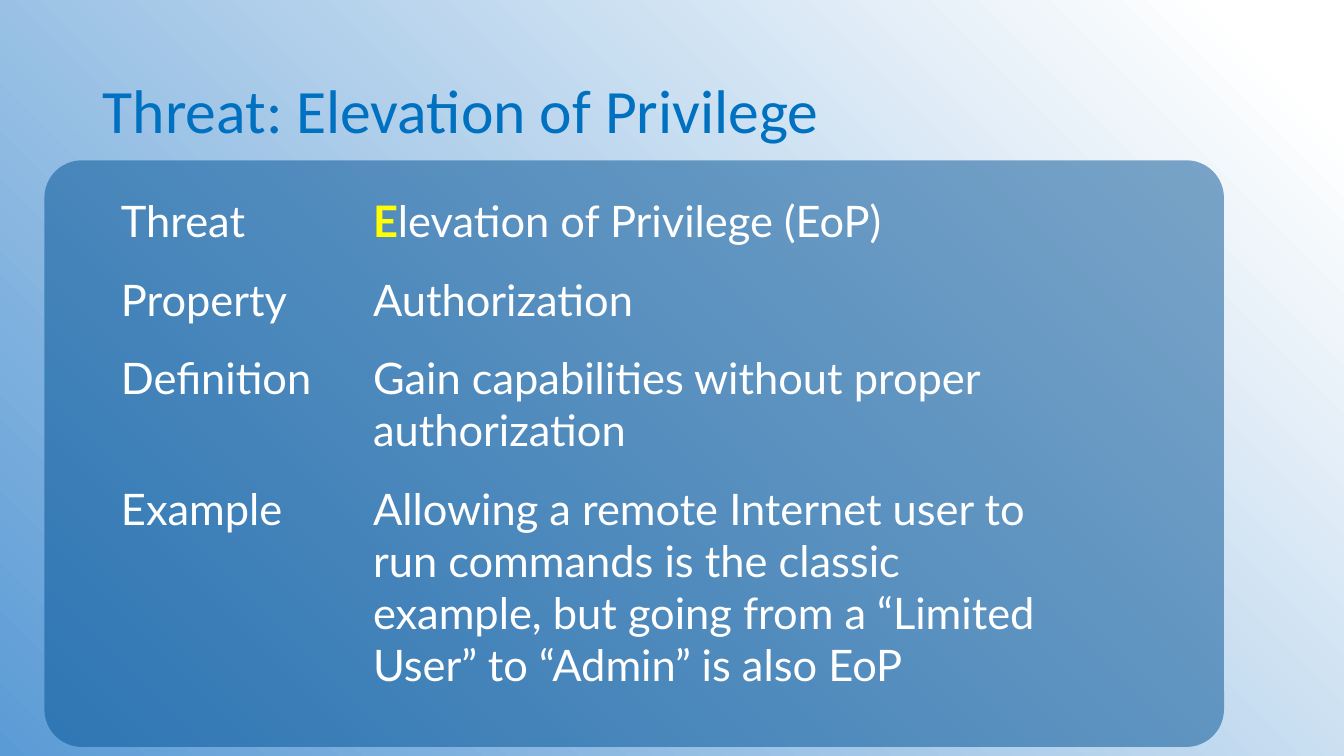
from pptx import Presentation
from pptx.dml.color import RGBColor
from pptx.enum.shapes import MSO_SHAPE as Shape
from pptx.enum.text import MSO_ANCHOR as Anchor, MSO_AUTO_SIZE as AutoSize, PP_ALIGN as Align
from pptx.oxml import parse_xml
from pptx.oxml.ns import nsdecls, qn
from pptx.util import Inches, Pt

WHITE = RGBColor(0xFF, 0xFF, 0xFF)
SKY = RGBColor(0x5B, 0x9B, 0xD5)
NAVY = RGBColor(0x00, 0x51, 0x94)
TITLE_BLUE = RGBColor(0x00, 0x70, 0xC0)
YELLOW = RGBColor(0xFF, 0xFF, 0x00)

PLAIN_TABLE_STYLE = "{2D5ABB26-0587-4C30-8999-92F81FD0307C}"
COLUMNS = (2.5, 7.24)
LINE = 0.52  # height of one text line
PADDING = 0.13

# label, highlighted initial, remaining text, number of lines
ROWS = (
    ("Threat", "E", "levation of Privilege (EoP)", 1),
    ("Property", "", "Authorization", 1),
    ("Definition", "", "Gain capabilities without proper authorization", 2),
    ("Example", "", "Allowing a remote Internet user to run commands is the classic "
     "example, but going from a “Limited User” to “Admin” is also EoP", 4),
)


def add_span(para, text, font, size, color, bold=False):
    span = para.add_run()
    span.text = text
    span.font.name = font
    span.font.size = Pt(size)
    span.font.color.rgb = color
    span.font.bold = bold


def paint_background(page):
    fill = page.background.fill
    fill.gradient()
    fill.gradient_angle = 225
    for stop, position, color in zip(fill.gradient_stops, (0.06, 1), (WHITE, SKY)):
        stop.position = position
        stop.color.rgb = color


def add_panel(page):
    """Add the half-transparent rounded panel behind the table."""
    panel = page.shapes.add_shape(Shape.ROUNDED_RECTANGLE, Inches(0.44), Inches(1.59),
                                  Inches(11.7), Inches(5.82))
    panel.adjustments[0] = 0.064
    panel.shadow.inherit = False
    panel.line.fill.background()
    panel.fill.solid()
    panel.fill.fore_color.rgb = NAVY
    color = panel.fill._xPr.find(qn("a:solidFill"))[0]
    color.append(parse_xml(f'<a:alpha {nsdecls("a")} val="50000"/>'))


def set_title(page, text):
    title = page.shapes.title
    title.left, title.top = Inches(0.92), Inches(0.4)
    title.width, title.height = Inches(11.5), Inches(1.45)
    frame = title.text_frame
    frame.auto_size = AutoSize.NONE
    frame.word_wrap = True
    frame.vertical_anchor = Anchor.MIDDLE
    para = frame.paragraphs[0]
    para.alignment = Align.LEFT
    para.line_spacing = 0.9
    add_span(para, text, "Calibri", 44, TITLE_BLUE)


def fill_cell(cell, initial, text):
    cell.fill.background()
    cell.margin_left = cell.margin_right = Inches(PADDING)
    cell.margin_top = cell.margin_bottom = Inches(PADDING)
    para = cell.text_frame.paragraphs[0]
    if initial:
        add_span(para, initial, "Lato", 31, YELLOW, bold=True)
    add_span(para, text, "Lato", 31, WHITE)


def add_threat_table(page):
    heights = [lines * LINE + 2 * PADDING for *_, lines in ROWS]
    frame = page.shapes.add_table(len(ROWS), len(COLUMNS), Inches(1.07), Inches(1.8),
                                  Inches(sum(COLUMNS)), Inches(sum(heights)))
    table = frame.table
    table.first_row = table.horz_banding = False
    table._tbl.tblPr.find(qn("a:tableStyleId")).text = PLAIN_TABLE_STYLE
    for column, width in zip(table.columns, COLUMNS):
        column.width = Inches(width)
    for row, height, (label, initial, text, _) in zip(table.rows, heights, ROWS):
        row.height = Inches(height)
        fill_cell(row.cells[0], "", label)
        fill_cell(row.cells[1], initial, text)


def main():
    deck = Presentation()
    deck.slide_width, deck.slide_height = Inches(13.33), Inches(7.5)
    page = deck.slides.add_slide(deck.slide_layouts[5])
    paint_background(page)
    add_panel(page)
    set_title(page, "Threat: Elevation of Privilege")
    add_threat_table(page)
    deck.save("out.pptx")


if __name__ == "__main__":
    main()
